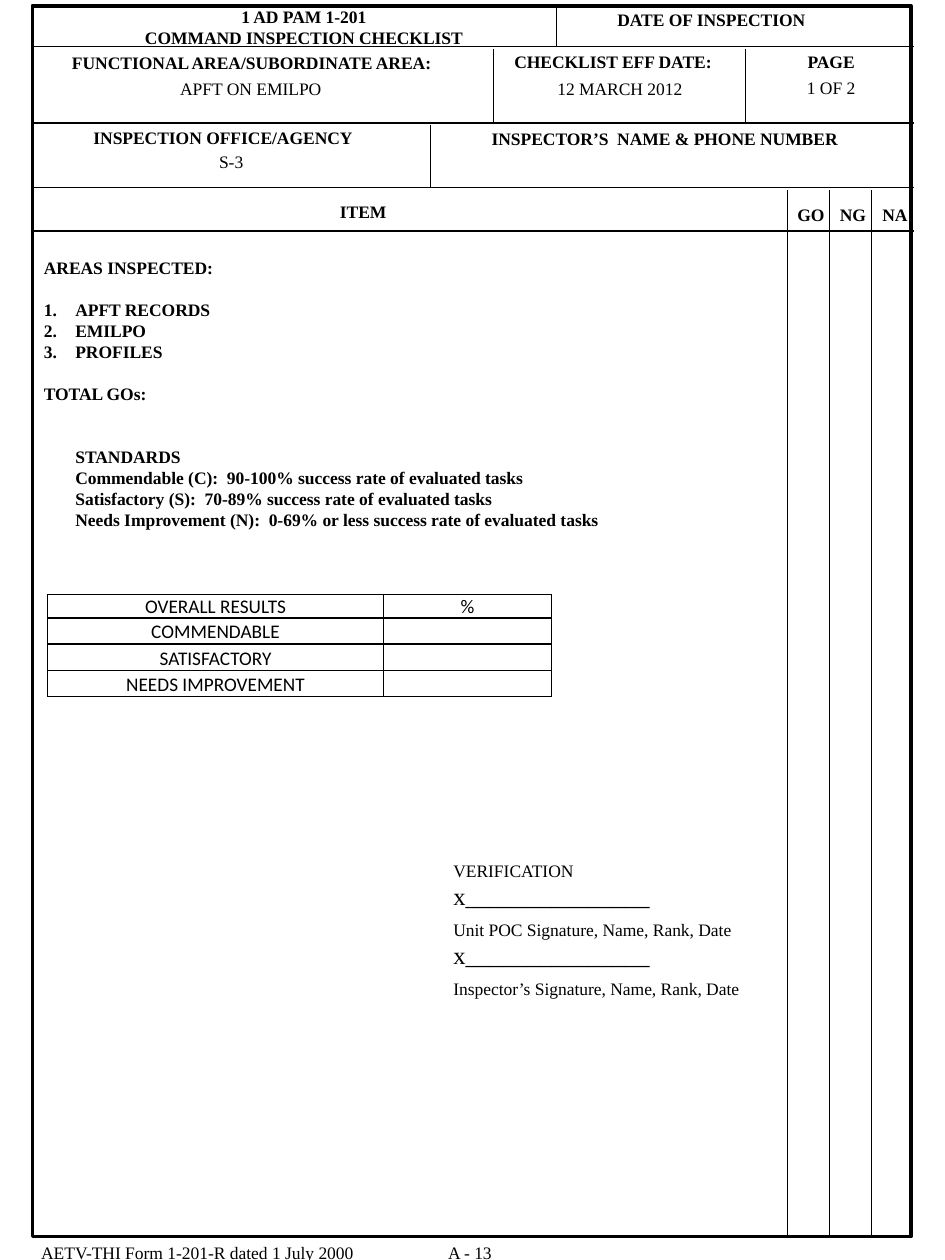
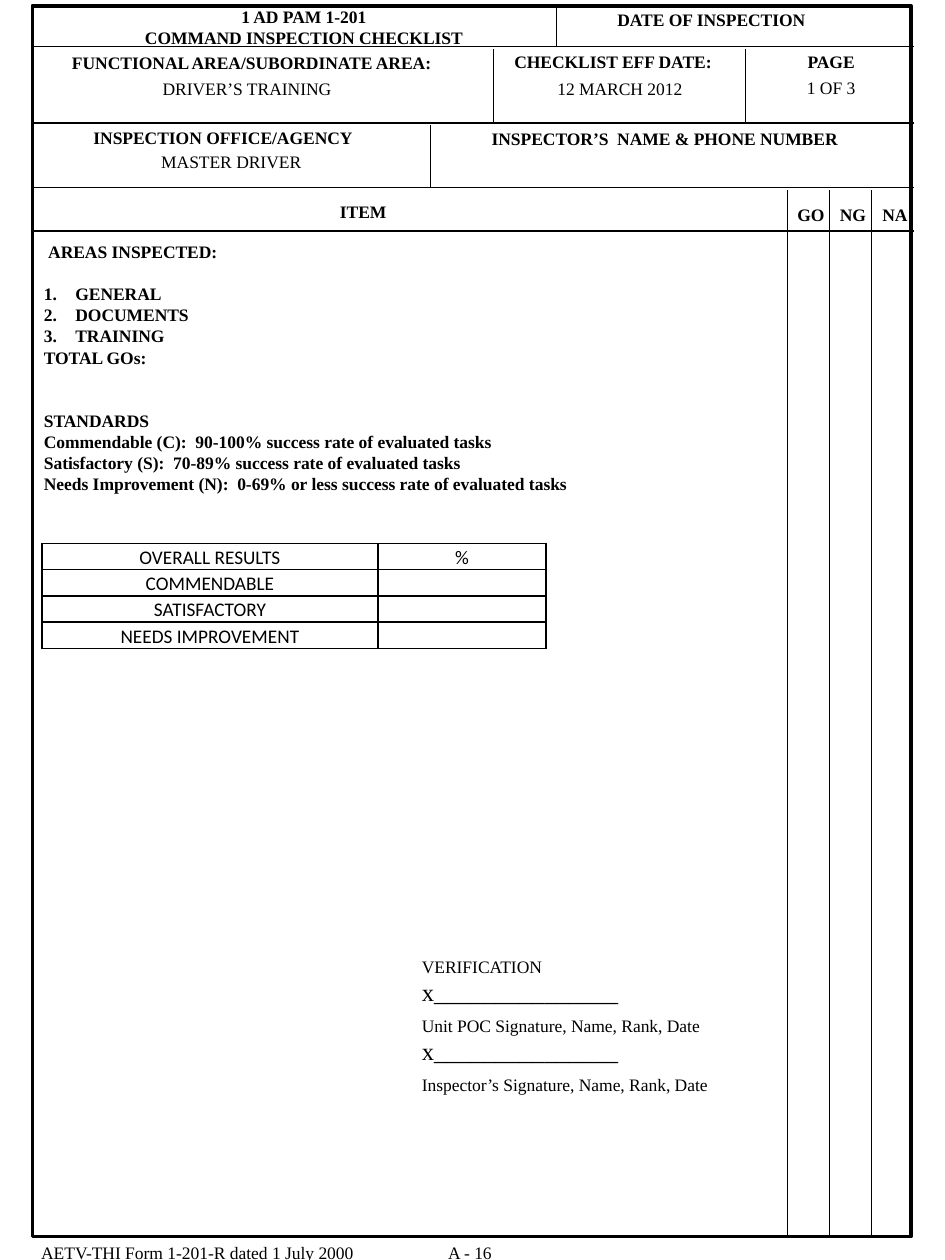
from dataclasses import dataclass

from lxml.etree import SubElement
from pptx import Presentation
from pptx.dml.color import RGBColor
from pptx.enum.shapes import MSO_CONNECTOR, MSO_SHAPE
from pptx.enum.text import MSO_ANCHOR, PP_ALIGN
from pptx.oxml.ns import qn
from pptx.slide import Slide
from pptx.text.text import TextFrame
from pptx.util import Pt

BLACK = RGBColor(0, 0, 0)
SERIF = "Times New Roman"
SANS = "Calibri"
LINE_HEIGHT = 12
FRAME_LEFT, FRAME_TOP, FRAME_RIGHT, FRAME_BOTTOM = 18.5, 3.3, 520.5, 706.6
RULE_END = 522
COLUMN_STEP = 24


@dataclass(frozen=True)
class Label:
    text: str
    left: float
    top: float
    width: float
    bold: bool = True


@dataclass(frozen=True)
class Rule:
    x1: float
    y1: float
    x2: float
    y2: float


@dataclass(frozen=True)
class Checklist:
    area: str
    area_left: float
    office: str
    page_count: str
    page_code: str
    body_top: float
    body_height: float
    heading_indent: float
    topics: tuple[str, ...]
    total_gap: float
    standards_indent: float
    signature_gap: float
    signature_indent: float
    table_left: float
    table_top: float
    header_height: float


ROW_RULES = [Rule(FRAME_LEFT, y, RULE_END, y) for y in (26.6, 70.4, 107.2, 132.2)]
CELL_RULES = [
    Rule(318, FRAME_TOP, 318, 26.6),
    Rule(282, 28.1, 282, 70.4),
    Rule(426, 28.1, 426, 70.4),
    Rule(246, 71.3, 246, 107.2),
]
MARK_RULES = [
    Rule(450 + COLUMN_STEP * index, 108.7, 450 + COLUMN_STEP * index, FRAME_BOTTOM)
    for index in range(3)
]
FORM_LABELS = [
    Label("1 AD PAM 1-201\nCOMMAND INSPECTION CHECKLIST", 75.2, 0, 196.8),
    Label("DATE OF INSPECTION", 344.9, 1.4, 123.1),
    Label("FUNCTIONAL AREA/SUBORDINATE AREA:", 31, 25.9, 225.4),
    Label("CHECKLIST EFF DATE:", 285.8, 25.5, 128.9),
    Label("PAGE", 436, 25.5, 77.8),
    Label("INSPECTION OFFICE/AGENCY", 43.5, 69.1, 167.8),
    Label("INSPECTOR’S  NAME & PHONE NUMBER", 273.2, 69.8, 213.1),
    Label("ITEM", 187, 111.2, 41),
    Label("AETV-THI Form 1-201-R dated 1 July 2000", 15.5, 706.3, 194.4, False),
    Label("12 MARCH 2012", 310.6, 41, 87.1, False),
] + [
    Label(mark, 446.4 + COLUMN_STEP * index, 113, 34)
    for index, mark in enumerate(("GO", "NG", "NA"))
]
STANDARDS = (
    "STANDARDS",
    "Commendable (C):  90-100% success rate of evaluated tasks",
    "Satisfactory (S):  70-89% success rate of evaluated tasks",
    "Needs Improvement (N):  0-69% or less success rate of evaluated tasks",
)
SIGNATURE_LINE = "x_______________"
SIGNATURES = (
    "VERIFICATION",
    SIGNATURE_LINE,
    "Unit POC Signature, Name, Rank, Date",
    SIGNATURE_LINE,
    "Inspector’s Signature, Name, Rank, Date",
)
RESULTS = (
    ("OVERALL RESULTS", "%"),
    ("COMMENDABLE", ""),
    ("SATISFACTORY", ""),
    ("NEEDS IMPROVEMENT", ""),
)
CHECKLISTS = (
    Checklist(
        area="APFT ON EMILPO", area_left=85.7, office="S-3",
        page_count="1 OF 2", page_code="A - 13",
        body_top=143.2, body_height=460.8, heading_indent=0,
        topics=("APFT RECORDS", "EMILPO", "PROFILES"),
        total_gap=LINE_HEIGHT, standards_indent=18,
        signature_gap=183.7, signature_indent=234,
        table_left=27.2, table_top=339.8, header_height=7.2,
    ),
    Checklist(
        area="DRIVER’S TRAINING", area_left=83.5, office="MASTER DRIVER",
        page_count="1 OF 3", page_code="A - 16",
        body_top=134.4, body_height=572, heading_indent=2.5,
        topics=("GENERAL", "DOCUMENTS", "TRAINING"),
        total_gap=0, standards_indent=0,
        signature_gap=259.6, signature_indent=216,
        table_left=24, table_top=310.5, header_height=15,
    ),
)


def write(
    frame: TextFrame, text: str, *, size: float = 10, bold: bool = False,
    font: str = SERIF, align: PP_ALIGN = PP_ALIGN.LEFT, before: float = 0,
    indent: float = 0, numbered: bool = False, line_height: float | None = None,
) -> None:
    para = frame.paragraphs[0]
    if para.runs:
        para = frame.add_paragraph()
    para.alignment = align
    para.space_before = Pt(before)
    if line_height:
        para.line_spacing = Pt(line_height)
    properties = para._p.get_or_add_pPr()
    properties.set("marL", str(Pt(indent)))
    properties.set("indent", str(-Pt(indent) if numbered else 0))
    if numbered:
        SubElement(properties, qn("a:buAutoNum"), type="arabicPeriod")
    if not text:
        SubElement(para._p, qn("a:endParaRPr"), sz=str(int(size * 100)))
        return
    span = para.add_run()
    span.text = text
    span.font.name = font
    span.font.size = Pt(size)
    span.font.bold = bold
    span.font.color.rgb = BLACK


def add_label(page: Slide, label: Label) -> None:
    lines = label.text.split("\n")
    height = 7.2 + LINE_HEIGHT * len(lines)
    box = page.shapes.add_textbox(Pt(label.left), Pt(label.top), Pt(label.width), Pt(height))
    box.text_frame.word_wrap = False
    for line in lines:
        write(box.text_frame, line, bold=label.bold, align=PP_ALIGN.CENTER)


def add_rule(page: Slide, rule: Rule) -> None:
    line = page.shapes.add_connector(
        MSO_CONNECTOR.STRAIGHT, Pt(rule.x1), Pt(rule.y1), Pt(rule.x2), Pt(rule.y2)
    )
    line.line.color.rgb = BLACK
    line.line.width = Pt(1)
    SubElement(line._element.spPr, qn("a:effectLst"))


def add_form(page: Slide) -> None:
    border = page.shapes.add_shape(
        MSO_SHAPE.RECTANGLE, Pt(FRAME_LEFT), Pt(FRAME_TOP),
        Pt(FRAME_RIGHT - FRAME_LEFT), Pt(FRAME_BOTTOM - FRAME_TOP),
    )
    border.shadow.inherit = False
    border.fill.background()
    border.line.color.rgb = BLACK
    border.line.width = Pt(2)
    for rule in ROW_RULES + CELL_RULES + MARK_RULES:
        add_rule(page, rule)
    for label in FORM_LABELS:
        add_label(page, label)


def add_body(page: Slide, checklist: Checklist) -> None:
    box = page.shapes.add_textbox(
        Pt(18), Pt(checklist.body_top), Pt(429.8), Pt(checklist.body_height)
    )
    frame = box.text_frame
    frame.word_wrap = True
    write(frame, "AREAS INSPECTED:", bold=True, indent=checklist.heading_indent)
    for index, topic in enumerate(checklist.topics):
        write(frame, topic, bold=True, indent=18, numbered=True,
              before=0 if index else LINE_HEIGHT)
    write(frame, "TOTAL GOs:", bold=True, before=checklist.total_gap)
    for index, standard in enumerate(STANDARDS):
        write(frame, standard, bold=True, indent=checklist.standards_indent,
              before=0 if index else 2 * LINE_HEIGHT)
    for index, entry in enumerate(SIGNATURES):
        write(frame, entry, size=14 if entry == SIGNATURE_LINE else 10,
              indent=checklist.signature_indent, line_height=16.8,
              before=0 if index else checklist.signature_gap)


def add_results(page: Slide, checklist: Checklist) -> None:
    heights = (checklist.header_height, 15, 15, 15)
    table = page.shapes.add_table(
        len(RESULTS), 2, Pt(checklist.table_left), Pt(checklist.table_top),
        Pt(288), Pt(sum(heights)),
    ).table
    table.first_row = False
    table.horz_banding = False
    for column, width in zip(table.columns, (192, 96)):
        column.width = Pt(width)
    for row, height, texts in zip(table.rows, heights, RESULTS):
        row.height = Pt(height)
        for cell, text in zip(row.cells, texts):
            cell.vertical_anchor = MSO_ANCHOR.BOTTOM
            cell.margin_left = cell.margin_right = Pt(5)
            cell.margin_top = cell.margin_bottom = Pt(0)
            properties = cell._tc.get_or_add_tcPr()
            for side in ("lnL", "lnR", "lnT", "lnB"):
                edge = SubElement(properties, qn(f"a:{side}"), w=str(Pt(1)))
                fill = SubElement(edge, qn("a:solidFill"))
                SubElement(fill, qn("a:srgbClr"), val=str(BLACK))
            cell.fill.background()
            write(cell.text_frame, text, size=11, font=SANS, align=PP_ALIGN.CENTER)


def add_checklist(page: Slide, checklist: Checklist) -> None:
    add_form(page)
    add_body(page, checklist)
    for label in (
        Label(checklist.page_code, 245.5, 706.1, 46.1, False),
        Label(checklist.office, 18, 82.6, 228.2, False),
        Label(checklist.page_count, 436, 40.3, 77.8, False),
        Label(checklist.area, checklist.area_left, 41, 115.2, False),
    ):
        add_label(page, label)
    add_results(page, checklist)


def main() -> None:
    deck = Presentation()
    deck.slide_width = Pt(540)
    deck.slide_height = Pt(720)
    for checklist in CHECKLISTS:
        page = deck.slides.add_slide(deck.slide_layouts[6])
        add_checklist(page, checklist)
    deck.save("out.pptx")


if __name__ == "__main__":
    main()
